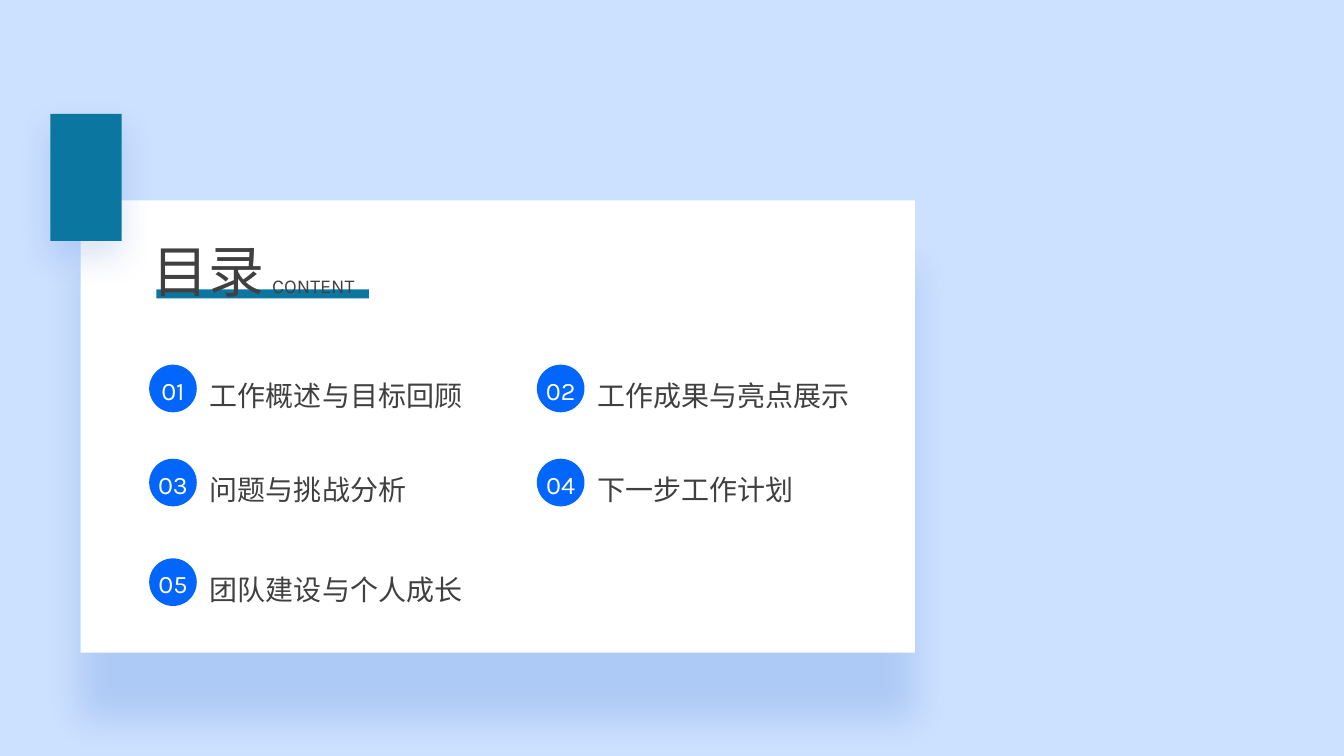
from lxml.etree import SubElement
from pptx import Presentation
from pptx.dml.color import RGBColor
from pptx.enum.shapes import MSO_SHAPE as Shape
from pptx.enum.text import MSO_ANCHOR as Anchor, MSO_AUTO_SIZE as AutoSize, PP_ALIGN as Align
from pptx.oxml.ns import qn
from pptx.util import Cm, Pt

TITLE = "目录"
SUBTITLE = "CONTENT"
TOPICS = [
    "工作概述与目标回顾",
    "工作成果与亮点展示",
    "问题与挑战分析",
    "下一步工作计划",
    "团队建设与个人成长",
]

SKY = RGBColor(0xCC, 0xE0, 0xFF)
WHITE = RGBColor(0xFF, 0xFF, 0xFF)
TEAL = RGBColor(0x0B, 0x76, 0xA0)
BLUE = RGBColor(0x02, 0x65, 0xFC)
SHADOW = RGBColor(0x01, 0x4C, 0xBD)
GREY = RGBColor(0x40, 0x40, 0x40)

COLUMNS = [3.76, 13.53]
ROWS = [9.19, 11.56, 14.07]
BADGE = 1.2
LABEL_SHIFT = (1.53, 0.18)
LABEL_SIZE = (7.52, 1.9)


def write(shape, text, *, size, font="Lato", color=GREY, align=Align.LEFT,
          anchor=Anchor.TOP, spacing=1.0):
    """Put one formatted line of text into a shape without margins."""
    frame = shape.text_frame
    frame.margin_left = frame.margin_top = frame.margin_right = frame.margin_bottom = 0
    frame.word_wrap = True
    frame.auto_size = AutoSize.NONE
    frame.vertical_anchor = anchor
    para = frame.paragraphs[0]
    para.alignment = align
    para.line_spacing = spacing
    span = para.add_run()
    span.text = text
    span.font.size = Pt(size)
    span.font.name = font
    span.font.color.rgb = color


def add_block(page, kind, left, top, width, height, color):
    """Add a flat filled shape, measured in centimetres."""
    block = page.shapes.add_shape(kind, Cm(left), Cm(top), Cm(width), Cm(height))
    block.fill.solid()
    block.fill.fore_color.rgb = color
    block.line.fill.background()
    block.shadow.inherit = False
    return block


def cast_shadow(block, distance):
    """Give a block a soft blue shadow that falls straight down."""
    effects = block._element.spPr.find(qn("a:effectLst"))
    outer = SubElement(effects, qn("a:outerShdw"), blurRad=str(Pt(25)),
                       dist=str(Pt(distance)), dir="5400000", algn="t", rotWithShape="0")
    tint = SubElement(outer, qn("a:srgbClr"), val=str(SHADOW))
    SubElement(tint, qn("a:alpha"), val="15000")


def add_label(page, left, top, width, height, text, **style):
    """Add a text box, measured in centimetres."""
    box = page.shapes.add_textbox(Cm(left), Cm(top), Cm(width), Cm(height))
    write(box, text, **style)


def main():
    """Build the contents slide and save it."""
    deck = Presentation()
    deck.slide_width, deck.slide_height = Cm(33.87), Cm(19.05)
    page = deck.slides.add_slide(deck.slide_layouts[5])
    page.background.fill.solid()
    page.background.fill.fore_color.rgb = SKY

    card = add_block(page, Shape.RECTANGLE, 2.03, 5.05, 21.03, 11.4, WHITE)
    cast_shadow(card, 47)
    tab = add_block(page, Shape.RECTANGLE, 1.27, 2.87, 1.8, 3.2, TEAL)
    cast_shadow(tab, 11)
    add_block(page, Shape.RECTANGLE, 3.94, 7.29, 5.36, 0.23, TEAL)

    title = page.shapes.title
    title.left, title.top, title.width, title.height = Cm(3.84), Cm(5.97), Cm(3), Cm(1.42)
    write(title, TITLE, size=40)
    page.shapes._spTree.append(title._element)
    add_label(page, 6.86, 6.91, 2.54, 0.48, SUBTITLE, size=14, font="Karla")

    for index, topic in enumerate(TOPICS):
        row, column = divmod(index, len(COLUMNS))
        left, top = COLUMNS[column], ROWS[row]
        badge = add_block(page, Shape.OVAL, left, top, BADGE, BADGE, BLUE)
        write(badge, f"{index + 1:02}", size=18, font="Karla", color=WHITE,
              align=Align.CENTER, anchor=Anchor.MIDDLE, spacing=1.1)
        add_label(page, left + LABEL_SHIFT[0], top + LABEL_SHIFT[1], *LABEL_SIZE,
                  topic, size=20, spacing=1.2)

    deck.save("out.pptx")


if __name__ == "__main__":
    main()
